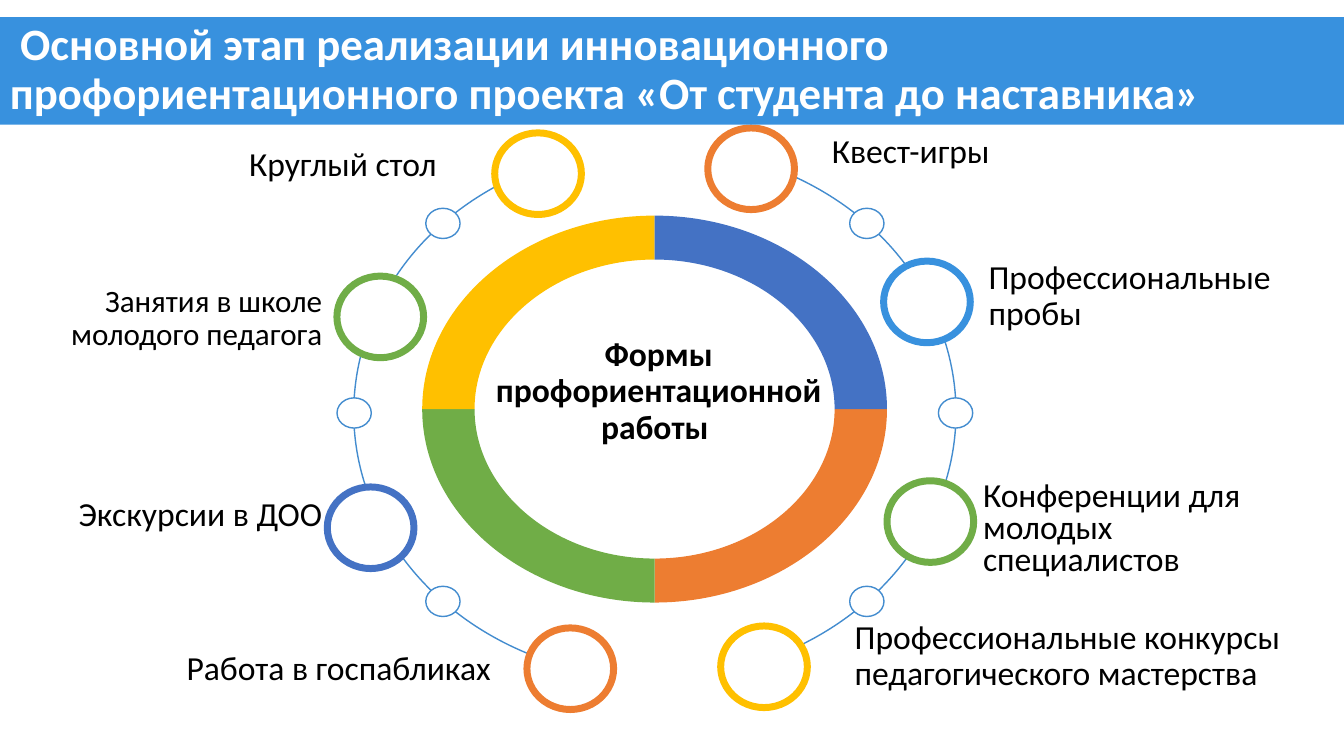
from dataclasses import dataclass
from math import cos, pi, sin

from lxml.etree import SubElement
from pptx import Presentation
from pptx.dml.color import RGBColor
from pptx.enum.shapes import MSO_SHAPE
from pptx.enum.text import MSO_ANCHOR, PP_ALIGN
from pptx.oxml.ns import qn
from pptx.shapes.autoshape import Shape
from pptx.slide import Slide
from pptx.util import Pt

Point = tuple[float, float]
Step = tuple[str, list[Point]]


@dataclass(frozen=True)
class Theme:
    font: str = "Calibri"
    white: str = "FFFFFF"
    black: str = "000000"
    sky: str = "3891DE"
    arc: str = "438CCF"
    blue: str = "4472C4"
    orange: str = "ED7D31"
    green: str = "70AD47"
    gold: str = "FFC000"
    title_size: float = 32
    label_size: float = 24
    small_label_size: float = 22.2


THEME = Theme()


@dataclass(frozen=True)
class Label:
    text: str
    left: float
    top: float
    width: float
    height: float
    size: float = THEME.label_size
    spacing: float = 0.9
    align: PP_ALIGN = PP_ALIGN.LEFT
    bold: bool = False


@dataclass(frozen=True)
class Circle:
    left: float
    top: float
    color: str
    width: float = 61.9
    height: float = 58.3
    line_width: float = 5


LABELS = [
    Label("Формы профориентационной работы ", 332.6, 237.6, 275.8, 101.5,
          align=PP_ALIGN.CENTER, bold=True),
    Label("Круглый стол", 170.9, 101.9, 204.5, 36.7),
    Label("Занятия в школе молодого педагога", 32.8, 200.2, 204.5, 67,
          size=THEME.small_label_size, align=PP_ALIGN.RIGHT),
    Label("Профессиональные конкурсы педагогического мастерства", 603.4, 439.7, 350.6, 78.5),
    Label("Экскурсии в ДОО", 49, 352.1, 223.9, 67),
    Label("Профессиональные пробы", 699.1, 182.2, 260.8, 67),
    Label("Работа в госпабликах", 126.2, 461.5, 264.2, 78),
    Label("Квест-игры", 587.1, 97.2, 204.5, 67, spacing=0.7),
    Label("Конференции для молодых специалистов", 695.1, 340.4, 239.8, 78.5, spacing=0.8),
]

SIDE_CIRCLES = {
    1: [
        Circle(514.8, 447.1, THEME.gold),
        Circle(631.2, 186.5, THEME.sky),
        Circle(505.6, 91.4, THEME.orange),
        Circle(633.6, 343.4, THEME.green),
    ],
    -1: [
        Circle(233.8, 347.8, THEME.blue),
        Circle(240.7, 197.2, THEME.green),
        Circle(376.4, 448.5, THEME.orange),
        Circle(353.4, 94.9, THEME.gold),
    ],
}

RING_CENTER = (467.6, 292.2)
OUTER_RADII = (166, 138.2)
INNER_RADII = (128.6, 106.8)
RING_COLORS = [THEME.orange, THEME.green, THEME.gold, THEME.blue]
QUARTER_HANDLE = 0.55

MIRROR_AXIS = 467.8
NODE_WIDTH, NODE_HEIGHT = 24.5, 21.6
NODE_CENTERS = [(619.2, 159.6), (682.6, 295), (619.2, 429.6)]
ARC_CORNERS = [(547.9, 118.8), (711.3, 470.9)]
ARC_STEPS: list[Step] = [
    ("moveTo", [(547.9, 470.9)]),
    ("cubicBezTo", [(658.8, 431.3), (712.1, 320.4), (666.7, 222.5)]),
    ("cubicBezTo", [(644.4, 173.5), (601.2, 137.5), (549.4, 118.8)]),
]


def rgb(color: str) -> RGBColor:
    return RGBColor.from_string(color)


def write(shape: Shape, text: str, size: float, color: str, spacing: float,
          align: PP_ALIGN, bold: bool) -> None:
    frame = shape.text_frame
    frame.word_wrap = True
    frame.vertical_anchor = MSO_ANCHOR.TOP
    paragraph = frame.paragraphs[0]
    paragraph.text = text
    paragraph.alignment = align
    paragraph.line_spacing = spacing
    paragraph.font.name = THEME.font
    paragraph.font.size = Pt(size)
    paragraph.font.bold = bold
    paragraph.font.color.rgb = rgb(color)


def add_label(page: Slide, label: Label) -> None:
    box = page.shapes.add_textbox(
        Pt(label.left), Pt(label.top), Pt(label.width), Pt(label.height))
    write(box, label.text, label.size, THEME.black, label.spacing, label.align, label.bold)


def add_circle(page: Slide, circle: Circle) -> None:
    oval = page.shapes.add_shape(
        MSO_SHAPE.OVAL, Pt(circle.left), Pt(circle.top), Pt(circle.width), Pt(circle.height))
    oval.shadow.inherit = False
    oval.fill.solid()
    oval.fill.fore_color.rgb = rgb(THEME.white)
    oval.line.color.rgb = rgb(circle.color)
    oval.line.width = Pt(circle.line_width)


def add_outline(page: Slide, corners: list[Point], steps: list[Step]) -> Shape:
    start, end = [(Pt(x), Pt(y)) for x, y in corners]
    builder = page.shapes.build_freeform(*start)
    builder.add_line_segments([end], close=False)
    outline = builder.convert_to_shape()
    outline.shadow.inherit = False
    geometry = outline.element.find(".//" + qn("a:path"))
    for child in list(geometry):
        geometry.remove(child)
    for command, points in steps:
        step = SubElement(geometry, qn("a:" + command))
        for x, y in points:
            SubElement(step, qn("a:pt"), x=str(Pt(x) - outline.left), y=str(Pt(y) - outline.top))
    return outline


def quarter_curve(quarter: int, radii: Point) -> list[Point]:
    turn = quarter * pi / 2
    unit = [(1, 0), (1, QUARTER_HANDLE), (QUARTER_HANDLE, 1), (0, 1)]
    return [(RING_CENTER[0] + radii[0] * (x * cos(turn) - y * sin(turn)),
             RING_CENTER[1] + radii[1] * (x * sin(turn) + y * cos(turn))) for x, y in unit]


def add_ring_quarter(page: Slide, quarter: int, color: str) -> None:
    outer = quarter_curve(quarter, OUTER_RADII)
    inner = quarter_curve(quarter, INNER_RADII)[::-1]
    steps = [("moveTo", outer[:1]), ("cubicBezTo", outer[1:]),
             ("lnTo", inner[:1]), ("cubicBezTo", inner[1:]), ("close", [])]
    sector = add_outline(page, [outer[0], outer[-1]], steps)
    sector.fill.solid()
    sector.fill.fore_color.rgb = rgb(color)
    sector.line.fill.background()


def add_side(page: Slide, direction: int) -> None:
    def place(point: Point) -> Point:
        return MIRROR_AXIS + direction * (point[0] - MIRROR_AXIS), point[1]

    steps = [(command, [place(point) for point in points]) for command, points in ARC_STEPS]
    arc = add_outline(page, [place(corner) for corner in ARC_CORNERS], steps)
    arc.fill.background()
    arc.line.color.rgb = rgb(THEME.arc)
    arc.line.width = Pt(1)
    for center in NODE_CENTERS:
        x, y = place(center)
        add_circle(page, Circle(x - NODE_WIDTH / 2, y - NODE_HEIGHT / 2, THEME.arc,
                                NODE_WIDTH, NODE_HEIGHT, 1))
    for circle in SIDE_CIRCLES[direction]:
        add_circle(page, circle)


def add_title(page: Slide) -> None:
    band = page.shapes.add_shape(MSO_SHAPE.RECTANGLE, Pt(0), Pt(12.2), Pt(960), Pt(76.8))
    band.shadow.inherit = False
    band.fill.solid()
    band.fill.fore_color.rgb = rgb(THEME.sky)
    band.line.fill.background()
    write(band, " Основной этап реализации инновационного профориентационного проекта "
          "«От студента до наставника»",
          THEME.title_size, THEME.white, 0.9, PP_ALIGN.LEFT, True)


def main() -> None:
    deck = Presentation()
    deck.slide_width, deck.slide_height = Pt(960), Pt(540)
    page = deck.slides.add_slide(deck.slide_layouts[6])
    for label in LABELS:
        add_label(page, label)
    for quarter, color in enumerate(RING_COLORS):
        add_ring_quarter(page, quarter, color)
    for direction in SIDE_CIRCLES:
        add_side(page, direction)
    add_title(page)
    deck.save("out.pptx")


if __name__ == "__main__":
    main()
